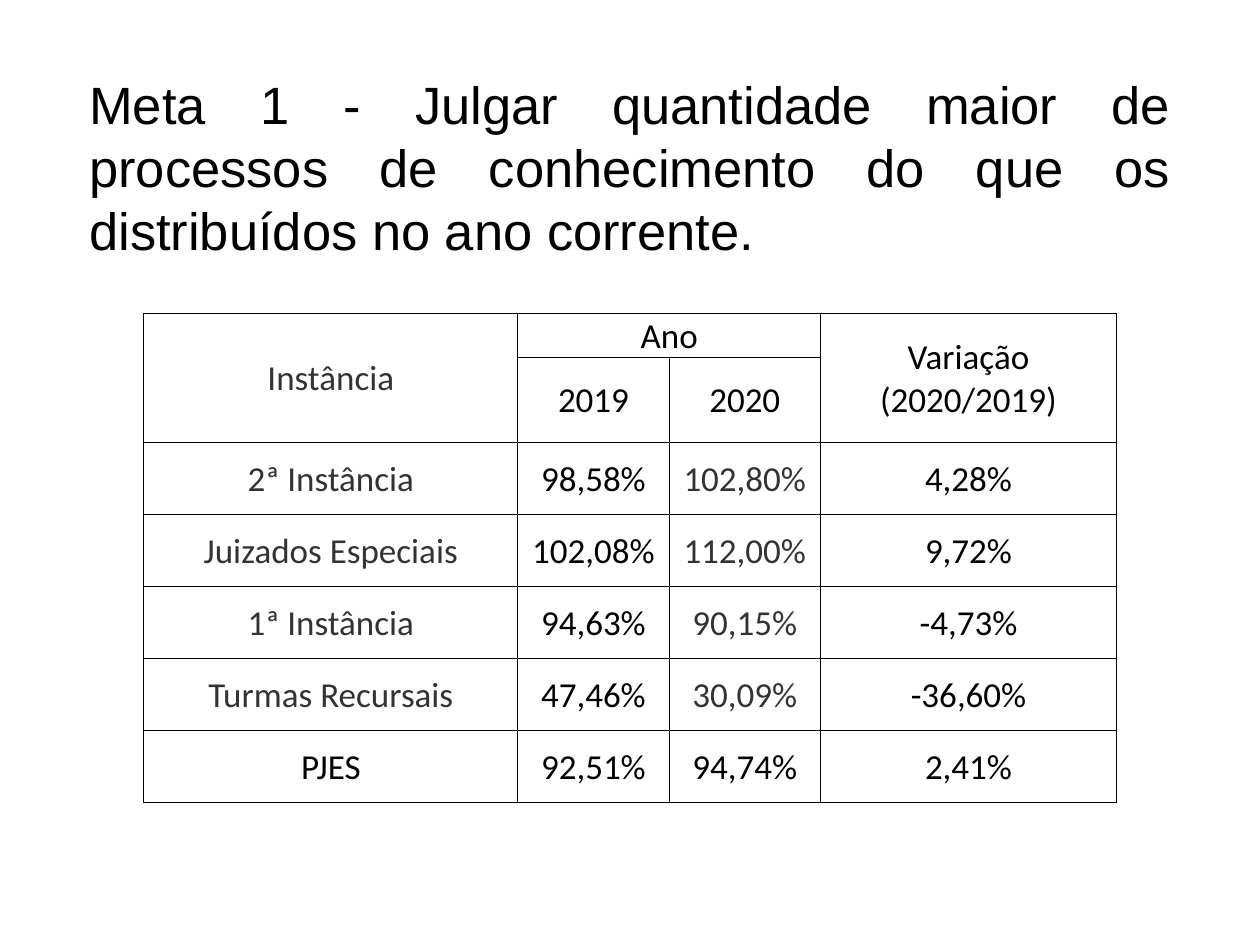
"""Build a slide with a court goal and its results table."""
from lxml import etree
from pptx import Presentation
from pptx import util as u
from pptx.dml.color import RGBColor
from pptx.enum import text
from pptx.oxml import ns

TITLE = ("Meta 1 - Julgar quantidade maior de processos de conhecimento "
         "do que os distribuídos no ano corrente.")
ROWS = [
    ("Instância", "Ano", "", "Variação (2020/2019)"),
    ("", "2019", "2020", ""),
    ("2ª Instância", "98,58%", "102,80%", "4,28%"),
    ("Juizados Especiais", "102,08%", "112,00%", "9,72%"),
    ("1ª Instância", "94,63%", "90,15%", "-4,73%"),
    ("Turmas Recursais", "47,46%", "30,09%", "-36,60%"),
    ("PJES", "92,51%", "94,74%", "2,41%"),
]
SPANS = [((0, 0), (1, 0)), ((0, 1), (0, 2)), ((0, 3), (1, 3))]
WIDTHS = [7.54, 3.05, 3.05, 5.97]
HEIGHTS = [0.76] * 2 + [1.45] * 5
BLACK, GREY = "000000", "333333"


def style(par, face, size, color, align):
    par.alignment = align
    par.font.name = face
    par.font.size = u.Pt(size)
    par.font.color.rgb = RGBColor.from_string(color)


def border(cell):
    props = cell._tc.get_or_add_tcPr()
    for side in ("lnL", "lnR", "lnT", "lnB"):
        line = etree.SubElement(props, ns.qn("a:" + side), w=str(u.Pt(0.5)))
        fill = etree.SubElement(line, ns.qn("a:solidFill"))
        etree.SubElement(fill, ns.qn("a:srgbClr"), val=BLACK)


def tone(row, col):
    head = (row, col) == (0, 0)
    body = 2 <= row < len(ROWS) - 1 and col in (0, 2)
    return GREY if head or body else BLACK


def add_title(slide):
    box = slide.shapes.add_textbox(u.Cm(1.55), u.Cm(1.32), u.Cm(22.3), u.Cm(4.11))
    frame = box.text_frame
    frame.word_wrap = True
    frame.auto_size = text.MSO_AUTO_SIZE.SHAPE_TO_FIT_TEXT
    frame.text = TITLE
    style(frame.paragraphs[0], "Arial", 30, BLACK, text.PP_ALIGN.JUSTIFY)


def add_grid(slide):
    grid = slide.shapes.add_table(
        len(ROWS), len(WIDTHS), u.Cm(2.9), u.Cm(6.32),
        u.Cm(sum(WIDTHS)), u.Cm(sum(HEIGHTS))).table
    grid.first_row = grid.horz_banding = False
    for col, width in zip(grid.columns, WIDTHS):
        col.width = u.Cm(width)
    for row, height in zip(grid.rows, HEIGHTS):
        row.height = u.Cm(height)
    for start, end in SPANS:
        grid.cell(*start).merge(grid.cell(*end))
    for r, words in enumerate(ROWS):
        for c, word in enumerate(words):
            cell = grid.cell(r, c)
            border(cell)
            cell.fill.background()
            cell.margin_left = cell.margin_right = cell.margin_top = u.Cm(0.03)
            cell.margin_bottom = 0
            cell.vertical_anchor = text.MSO_ANCHOR.MIDDLE
            cell.text = word
            style(cell.text_frame.paragraphs[0], "Calibri", 20,
                  tone(r, c), text.PP_ALIGN.CENTER)
    grid.cell(0, 1).vertical_anchor = text.MSO_ANCHOR.BOTTOM


def main():
    deck = Presentation()
    deck.slide_width, deck.slide_height = u.Cm(25.4), u.Cm(19.05)
    slide = deck.slides.add_slide(deck.slide_layouts[6])
    add_title(slide)
    add_grid(slide)
    deck.save("out.pptx")


if __name__ == "__main__":
    main()
